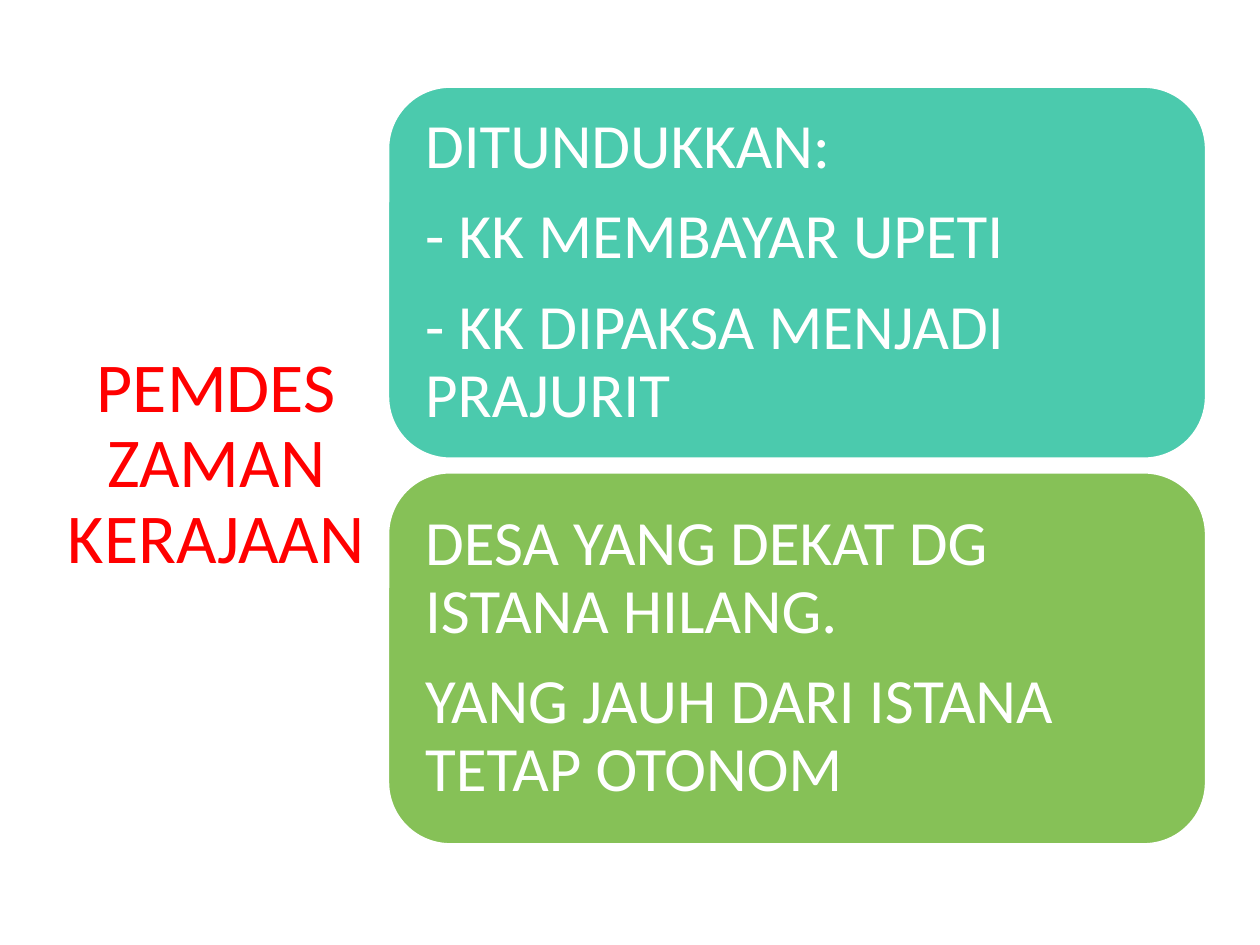
from pptx import Presentation
from pptx.dml.color import RGBColor
from pptx.enum import shapes, text
from pptx.util import Pt

COLORS = {"title": "FF0000", "white": "FFFFFF", "teal": "4BCAAD", "green": "86C157"}
FONT = "Calibri"

TITLE = "PEMDES ZAMAN KERAJAAN"
PANELS = [
    ("teal", ["DITUNDUKKAN:", "- KK MEMBAYAR UPETI", "- KK DIPAKSA MENJADI PRAJURIT"]),
    ("green", ["DESA YANG DEKAT DG ISTANA HILANG.", "YANG JAUH DARI ISTANA TETAP OTONOM"]),
]

PANEL_LEFT, PANEL_TOP = 221.8, 49.6
PANEL_WIDTH, PANEL_HEIGHT, PANEL_GAP = 467.3, 212.4, 8


def write(frame, paragraphs, *, size, color, align, inset, space_after=0):
    frame.word_wrap = True
    frame.auto_size = text.MSO_AUTO_SIZE.NONE
    frame.vertical_anchor = text.MSO_ANCHOR.MIDDLE
    frame.margin_left = frame.margin_right = Pt(inset)
    frame.margin_top = frame.margin_bottom = Pt(inset)
    for index, wording in enumerate(paragraphs):
        paragraph = frame.add_paragraph() if index else frame.paragraphs[0]
        paragraph.alignment = align
        paragraph.line_spacing = 0.9
        paragraph.space_before = Pt(0)
        paragraph.space_after = Pt(space_after)
        run = paragraph.add_run()
        run.text = wording
        run.font.name = FONT
        run.font.size = Pt(size)
        run.font.color.rgb = RGBColor.from_string(COLORS[color])


def add_panel(slide, top, fill, paragraphs):
    panel = slide.shapes.add_shape(
        shapes.MSO_SHAPE.ROUNDED_RECTANGLE,
        Pt(PANEL_LEFT), Pt(top), Pt(PANEL_WIDTH), Pt(PANEL_HEIGHT))
    panel.shadow.inherit = False
    panel.fill.solid()
    panel.fill.fore_color.rgb = RGBColor.from_string(COLORS[fill])
    panel.line.color.rgb = RGBColor.from_string(COLORS["white"])
    panel.line.width = Pt(1.25)
    write(panel.text_frame, paragraphs, size=36, color="white",
          align=text.PP_ALIGN.LEFT, inset=10.8, space_after=12.6)


def main():
    deck = Presentation()
    deck.slide_width, deck.slide_height = Pt(720), Pt(540)
    slide = deck.slides.add_slide(deck.slide_layouts[5])

    title = slide.shapes.title
    title.left, title.top, title.width, title.height = Pt(31), Pt(49), Pt(185), Pt(433.4)
    write(title.text_frame, [TITLE], size=40, color="title",
          align=text.PP_ALIGN.CENTER, inset=3.6)

    for row, (fill, paragraphs) in enumerate(PANELS):
        add_panel(slide, PANEL_TOP + row * (PANEL_HEIGHT + PANEL_GAP), fill, paragraphs)

    deck.save("out.pptx")


if __name__ == "__main__":
    main()
